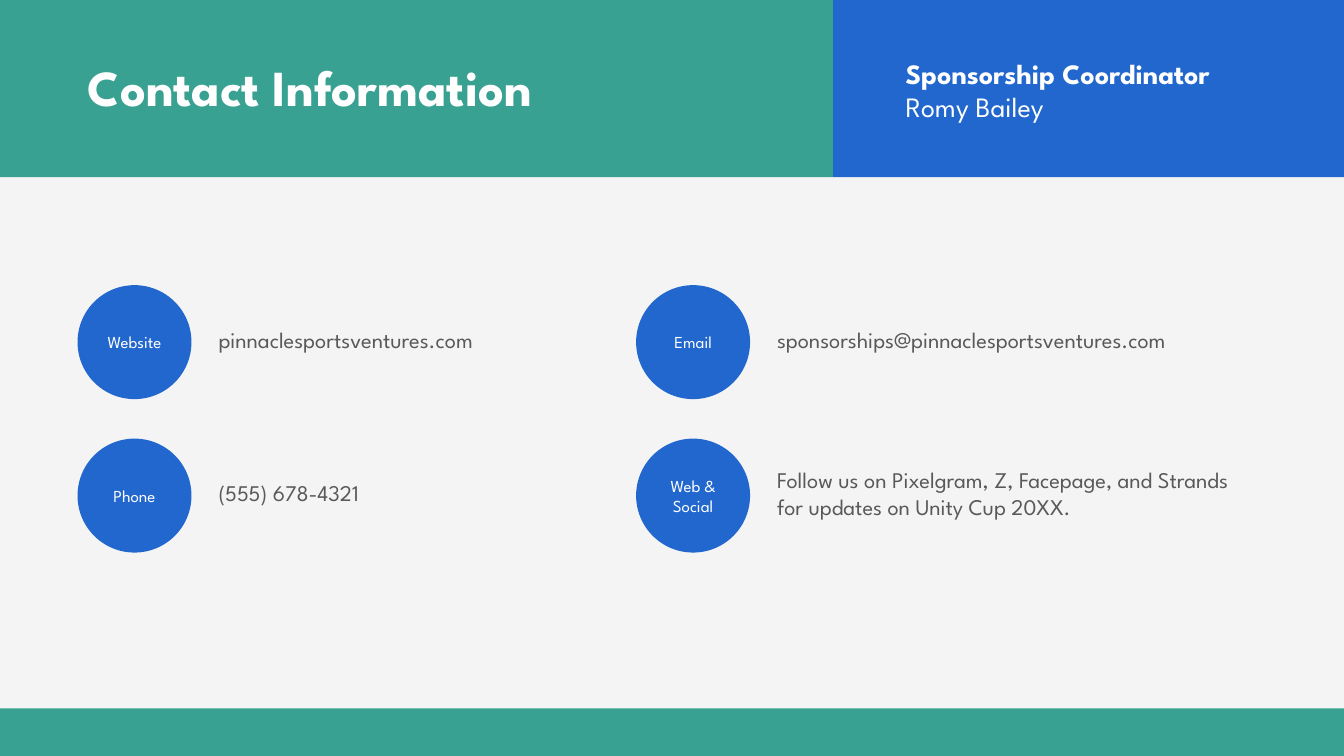
from pptx import Presentation
from pptx.dml.color import RGBColor
from pptx.enum import shapes, text
from pptx.util import Pt

COLORS = {"green": "38A191", "blue": "2167CE", "paper": "F4F4F4",
          "white": "FFFFFF", "gray": "595959"}
FONT = "League Spartan"


def write(shape, lines, size, color="white", bold=(), align=text.PP_ALIGN.LEFT,
          anchor=text.MSO_ANCHOR.MIDDLE, side_inset=7.2):
    """Write one paragraph per line; bold lists the indexes of bold lines."""
    frame = shape.text_frame
    frame.word_wrap = True
    frame.auto_size = text.MSO_AUTO_SIZE.NONE
    frame.vertical_anchor = anchor
    frame.margin_left = frame.margin_right = Pt(side_inset)
    frame.margin_top = frame.margin_bottom = Pt(3.6)
    frame.text = "\n".join(lines)
    for index, paragraph in enumerate(frame.paragraphs):
        paragraph.alignment = align
        paragraph.line_spacing = 1.0
        paragraph.space_before = Pt(0)
        font = paragraph.runs[0].font
        font.name, font.size, font.bold = FONT, Pt(size), index in bold
        font.color.rgb = RGBColor.from_string(COLORS[color])


def add_block(kind, left, top, width, height, color):
    block = slide.shapes.add_shape(kind, Pt(left), Pt(top), Pt(width), Pt(height))
    block.shadow.inherit = False
    block.fill.solid()
    block.fill.fore_color.rgb = RGBColor.from_string(COLORS[color])
    block.line.fill.background()
    return block


# Slide and background
deck = Presentation()
deck.slide_width, deck.slide_height = Pt(960), Pt(540)
slide = deck.slides.add_slide(deck.slide_layouts[5])
slide.background.fill.solid()
slide.background.fill.fore_color.rgb = RGBColor.from_string(COLORS["paper"])

# Header and footer bands
for left, top, width, height, color in [
    (595, 0, 365, 126.5, "blue"),
    (0, 0, 595, 126.5, "green"),
    (0, 506, 960, 34, "green"),
]:
    add_block(shapes.MSO_SHAPE.RECTANGLE, left, top, width, height, color)

# Title, brought in front of the header band
title = slide.shapes.title
title.left, title.top, title.width, title.height = Pt(55.4), Pt(36.7), Pt(407.5), Pt(51)
write(title, ["Contact Information"], 36, bold=(0,), anchor=text.MSO_ANCHOR.TOP)
title.element.getparent().append(title.element)

# Coordinator
coordinator = slide.shapes.add_textbox(Pt(639.8), Pt(36.7), Pt(283.7), Pt(55.7))
write(coordinator, ["Sponsorship Coordinator", "Romy Bailey"], 20, bold=(0,),
      anchor=text.MSO_ANCHOR.TOP)

# Contact grid: a round label with its detail to the right
CIRCLE = 81.4
GRID_LEFT, GRID_TOP, COLUMN_STEP, ROW_STEP = 55.4, 203.7, 399, 109.6
DETAIL_OFFSET, DETAIL_HEIGHT = 93.6, 46
contacts = [
    [("Website", "pinnaclesportsventures.com", 256),
     ("Email", "sponsorships@pinnaclesportsventures.com", 371.5)],
    [("Phone", "(555) 678-4321", 195),
     ("Web & Social", "Follow us on Pixelgram, Z, Facepage, and Strands "
                      "for updates on Unity Cup 20XX.", 345.6)],
]
for row, entries in enumerate(contacts):
    for column, (label, detail, detail_width) in enumerate(entries):
        left = GRID_LEFT + column * COLUMN_STEP
        top = GRID_TOP + row * ROW_STEP
        circle = add_block(shapes.MSO_SHAPE.OVAL, left, top, CIRCLE, CIRCLE, "blue")
        write(circle, [label], 12, align=text.PP_ALIGN.CENTER, side_inset=0)
        detail_top = top + (CIRCLE - DETAIL_HEIGHT) / 2 - 2
        detail_box = slide.shapes.add_textbox(
            Pt(left + DETAIL_OFFSET), Pt(detail_top), Pt(detail_width), Pt(DETAIL_HEIGHT))
        write(detail_box, [detail], 16, color="gray")

deck.save("out.pptx")
